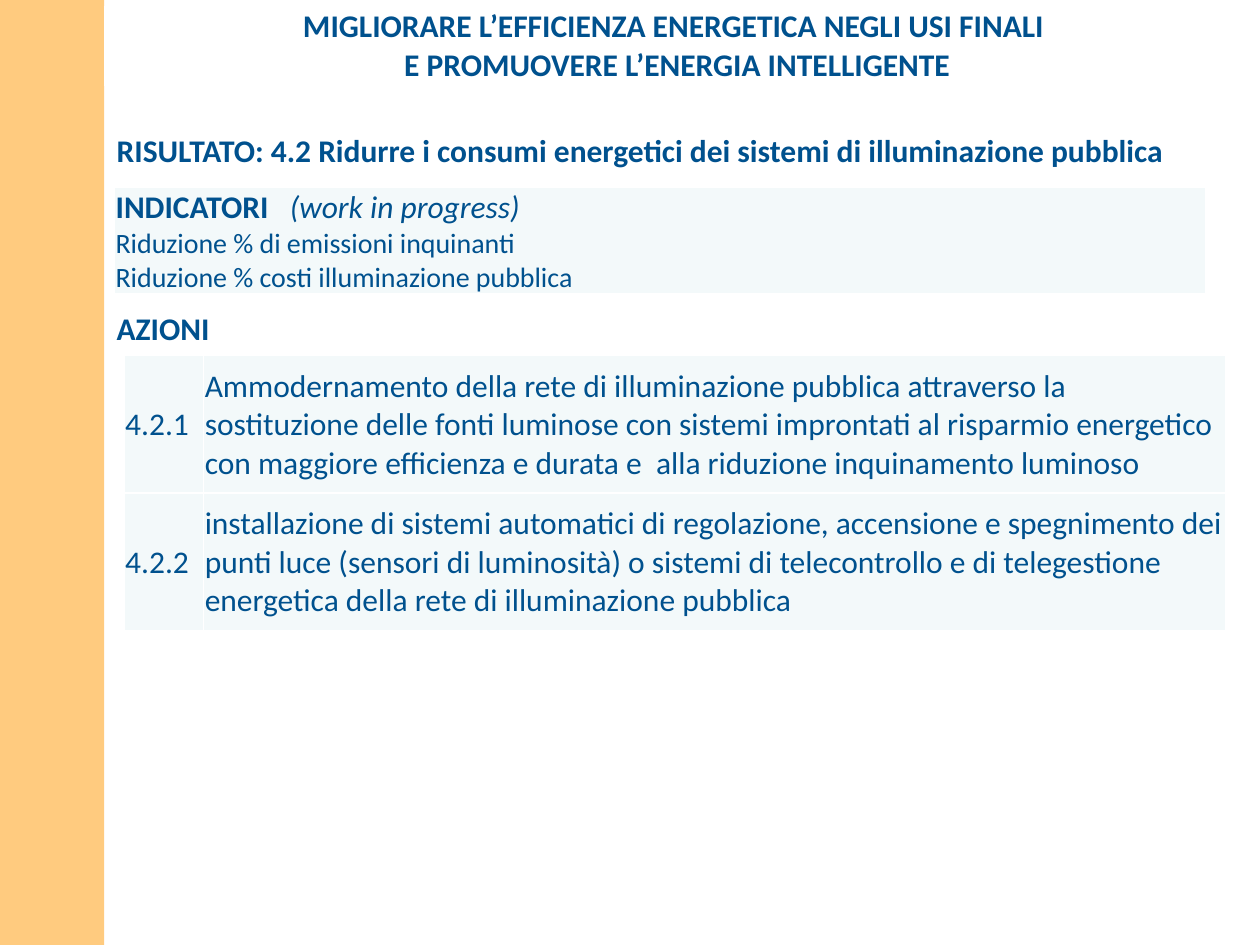
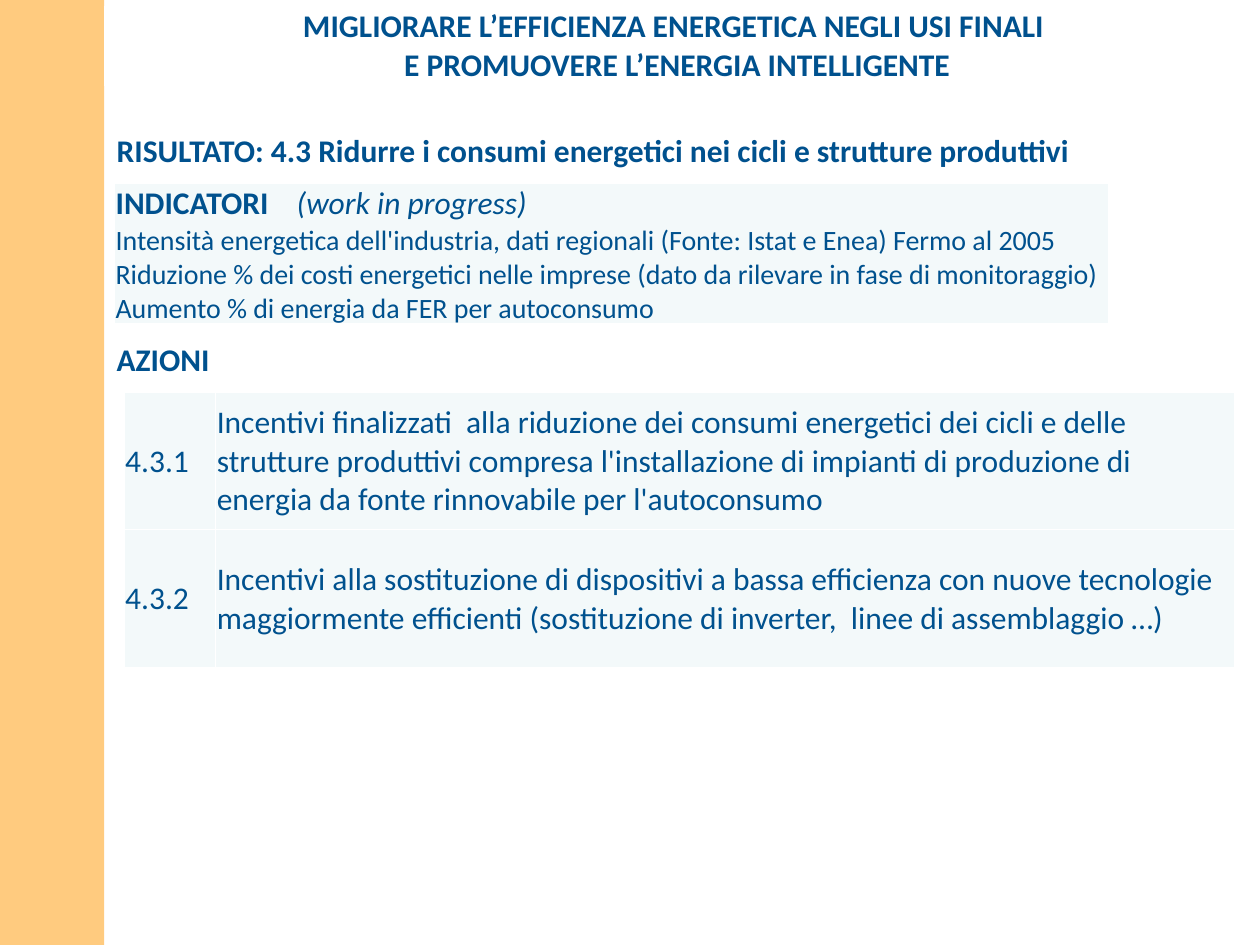
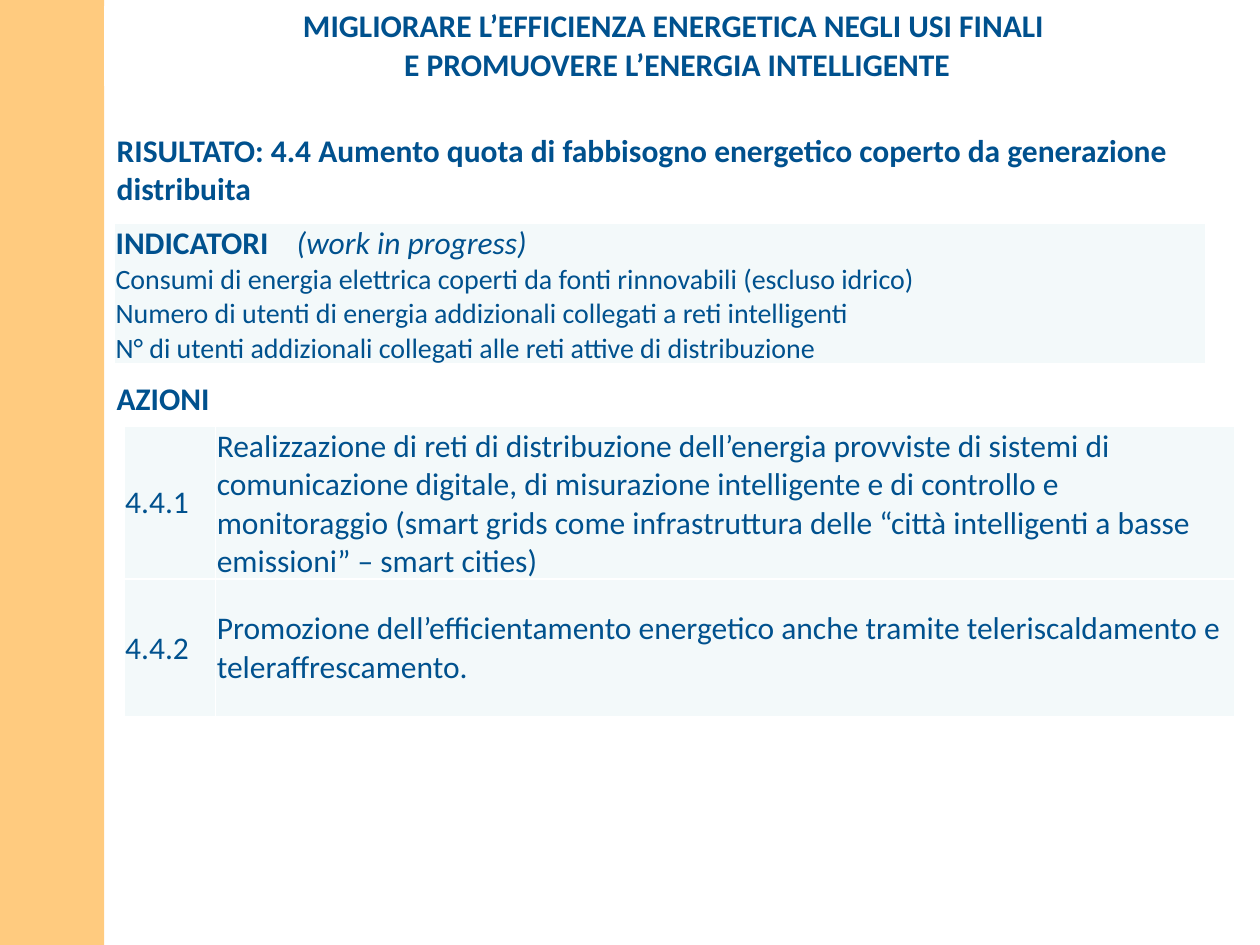
import dataclasses

import lxml.etree
import pptx
import pptx.dml.color
import pptx.enum.shapes
import pptx.enum.text
import pptx.oxml
import pptx.oxml.ns
import pptx.util

Pt = pptx.util.Pt
RGBColor = pptx.dml.color.RGBColor
Align = pptx.enum.text.PP_ALIGN
Anchor = pptx.enum.text.MSO_ANCHOR
qn = pptx.oxml.ns.qn

BLUE = RGBColor(0x00, 0x51, 0x8E)
ORANGE = RGBColor(0xFF, 0x99, 0x00)
PALE = RGBColor(0xF3, 0xF9, 0xFA)
WHITE = RGBColor(0xFF, 0xFF, 0xFF)
FONT = "Calibri"
CELL_MARGIN = 0.7

SLIDE_WIDTH, SLIDE_HEIGHT = 720, 540
BAND_BOX = (0, 0, 59.5, SLIDE_HEIGHT)
HEADING_BOX = (59.75, 3.6, 654.5, 45.4)
LABEL_LEFT = 59.5
HEADING = [
    "MIGLIORARE L’EFFICIENZA ENERGETICA NEGLI USI FINALI ",
    "E PROMUOVERE L’ENERGIA INTELLIGENTE",
]


@dataclasses.dataclass
class Result:
    title: str
    title_height: float
    indicators: list
    indicators_box: tuple
    note_tab: float
    actions_label_top: float
    actions: list
    actions_top: float
    column_widths: tuple
    row_heights: tuple


RESULTS = [
    Result(
        title="RISULTATO: 4.2 Ridurre i consumi energetici dei sistemi di illuminazione pubblica",
        title_height=29,
        indicators=[
            "Riduzione % di emissioni inquinanti",
            "Riduzione % costi illuminazione pubblica",
        ],
        indicators_box=(65.4, 107.1, 623.75, 60.4),
        note_tab=99.5,
        actions_label_top=172.8,
        actions=[
            ("4.2.1", "Ammodernamento della rete di illuminazione pubblica attraverso la sostituzione delle fonti luminose con sistemi improntati al risparmio energetico con maggiore efficienza e durata e  alla riduzione inquinamento luminoso"),
            ("4.2.2", "installazione di sistemi automatici di regolazione, accensione e spegnimento dei punti luce (sensori di luminosità) o sistemi di telecontrollo e di telegestione energetica della rete di illuminazione pubblica"),
        ],
        actions_top=203.1,
        column_widths=(45.5, 584),
        row_heights=(78.7, 78.7),
    ),
    Result(
        title="RISULTATO: 4.3 Ridurre i consumi energetici nei cicli e strutture produttivi",
        title_height=29,
        indicators=[
            "Intensità energetica dell'industria, dati regionali (Fonte: Istat e Enea) Fermo al 2005",
            "Riduzione % dei costi energetici nelle imprese (dato da rilevare in fase di monitoraggio)",
            "Aumento % di energia da FER per autoconsumo",
        ],
        indicators_box=(65.4, 105, 568.25, 80),
        note_tab=103.5,
        actions_label_top=190.8,
        actions=[
            ("4.3.1", "Incentivi finalizzati  alla riduzione dei consumi energetici dei cicli e delle strutture produttivi compresa l'installazione di impianti di produzione di energia da fonte rinnovabile per l'autoconsumo"),
            ("4.3.2", "Incentivi alla sostituzione di dispositivi a bassa efficienza con nuove tecnologie maggiormente efficienti (sostituzione di inverter,  linee di assemblaggio …)"),
        ],
        actions_top=224,
        column_widths=(52.4, 582.5),
        row_heights=(78.7, 78.7),
    ),
    Result(
        title="RISULTATO: 4.4 Aumento quota di fabbisogno energetico coperto da generazione distribuita",
        title_height=51,
        indicators=[
            "Consumi di energia elettrica coperti da fonti rinnovabili (escluso idrico)",
            "Numero di utenti di energia addizionali collegati a reti intelligenti",
            "N° di utenti addizionali collegati alle reti attive di distribuzione",
        ],
        indicators_box=(65.4, 127.6, 623.75, 80),
        note_tab=103.5,
        actions_label_top=213.1,
        actions=[
            ("4.4.1", "Realizzazione di reti di distribuzione dell’energia provviste di sistemi di comunicazione digitale, di misurazione intelligente e di controllo e monitoraggio (smart grids come infrastruttura delle “città intelligenti a basse emissioni” – smart cities)"),
            ("4.4.2", "Promozione dell’efficientamento energetico anche tramite teleriscaldamento e teleraffrescamento."),
        ],
        actions_top=243.6,
        column_widths=(52.4, 582.5),
        row_heights=(86.8, 78.7),
    ),
]


def write_text(paragraph, text, size=18, bold=False, italic=False, align=Align.LEFT):
    paragraph.alignment = align
    run = paragraph.add_run()
    run.text = text
    run.font.name = FONT
    run.font.size = Pt(size)
    run.font.bold = bold
    run.font.italic = italic
    run.font.color.rgb = BLUE


def set_tab(paragraph, position):
    properties = paragraph._p.get_or_add_pPr()
    tab_list = lxml.etree.SubElement(properties, qn("a:tabLst"))
    lxml.etree.SubElement(tab_list, qn("a:tab"), pos=str(Pt(position)), algn="l")


def set_borders(cell):
    properties = cell._tc.get_or_add_tcPr()
    for index, side in enumerate(("lnL", "lnR", "lnT", "lnB")):
        line = lxml.etree.Element(qn(f"a:{side}"), w=str(Pt(1)))
        fill = lxml.etree.SubElement(line, qn("a:solidFill"))
        lxml.etree.SubElement(fill, qn("a:srgbClr"), val=str(WHITE))
        properties.insert(index, line)


def add_plain_table(slide, left, top, column_widths, row_heights, fill=PALE, margin=CELL_MARGIN):
    table = slide.shapes.add_table(
        len(row_heights), len(column_widths), Pt(left), Pt(top),
        Pt(sum(column_widths)), Pt(sum(row_heights)),
    ).table
    table.first_row = False
    table.horz_banding = False
    for column, width in zip(table.columns, column_widths):
        column.width = Pt(width)
    for row, height in zip(table.rows, row_heights):
        row.height = Pt(height)
    for cell in table.iter_cells():
        cell.fill.solid()
        cell.fill.fore_color.rgb = fill
        cell.vertical_anchor = Anchor.MIDDLE
        cell.margin_left = cell.margin_right = cell.margin_top = Pt(margin)
        cell.margin_bottom = 0
        set_borders(cell)
    return table


def add_band(slide, box):
    band = slide.shapes.add_shape(
        pptx.enum.shapes.MSO_SHAPE.RECTANGLE, *(Pt(length) for length in box)
    )
    band.shadow.inherit = False
    band.line.fill.background()
    band.fill.solid()
    band.fill.fore_color.rgb = ORANGE
    color = band.element.find(".//" + qn("a:srgbClr"))
    lxml.etree.SubElement(color, qn("a:alpha"), val="50000")


def add_heading(slide, box):
    left, top, width, height = box
    table = add_plain_table(slide, left, top, [width], [height], fill=WHITE, margin=0)
    frame = table.cell(0, 0).text_frame
    for index, line in enumerate(HEADING):
        paragraph = frame.add_paragraph() if index else frame.paragraphs[0]
        write_text(paragraph, line, bold=True, align=Align.CENTER)


def add_indicators(slide, box, indicators, note_tab):
    left, top, width, height = box
    frame = add_plain_table(slide, left, top, [width], [height]).cell(0, 0).text_frame
    label = frame.paragraphs[0]
    set_tab(label, note_tab)
    write_text(label, "INDICATORI\t", bold=True)
    write_text(label, "(work in progress)", italic=True)
    for indicator in indicators:
        write_text(frame.add_paragraph(), indicator, size=16)


def place_label(shape, text, left, top, width, height):
    shape.left, shape.top, shape.width, shape.height = map(Pt, (left, top, width, height))
    frame = shape.text_frame
    frame.word_wrap = True
    frame.auto_size = pptx.enum.text.MSO_AUTO_SIZE.SHAPE_TO_FIT_TEXT
    frame.vertical_anchor = Anchor.TOP
    write_text(frame.paragraphs[0], text, bold=True)


def add_actions(slide, left, top, result):
    table = add_plain_table(slide, left, top, result.column_widths, result.row_heights)
    for row, action in zip(table.rows, result.actions):
        for cell, text in zip(row.cells, action):
            write_text(cell.text_frame.paragraphs[0], text)


def add_result_slide(presentation, layout, result):
    slide = presentation.slides.add_slide(layout)
    add_band(slide, BAND_BOX)
    add_heading(slide, HEADING_BOX)
    add_indicators(slide, result.indicators_box, result.indicators, result.note_tab)
    place_label(slide.shapes.title, result.title, LABEL_LEFT, 71.25, 652.5, result.title_height)
    actions_label = slide.shapes.add_textbox(0, 0, 0, 0)
    place_label(actions_label, "AZIONI", LABEL_LEFT, result.actions_label_top, 73.5, 29)
    add_actions(slide, 70.85, result.actions_top, result)


def main():
    presentation = pptx.Presentation()
    presentation.slide_width = Pt(SLIDE_WIDTH)
    presentation.slide_height = Pt(SLIDE_HEIGHT)
    layout = presentation.slide_layouts.get_by_name("Title Only")
    for result in RESULTS:
        add_result_slide(presentation, layout, result)
    presentation.save("out.pptx")


if __name__ == "__main__":
    main()
